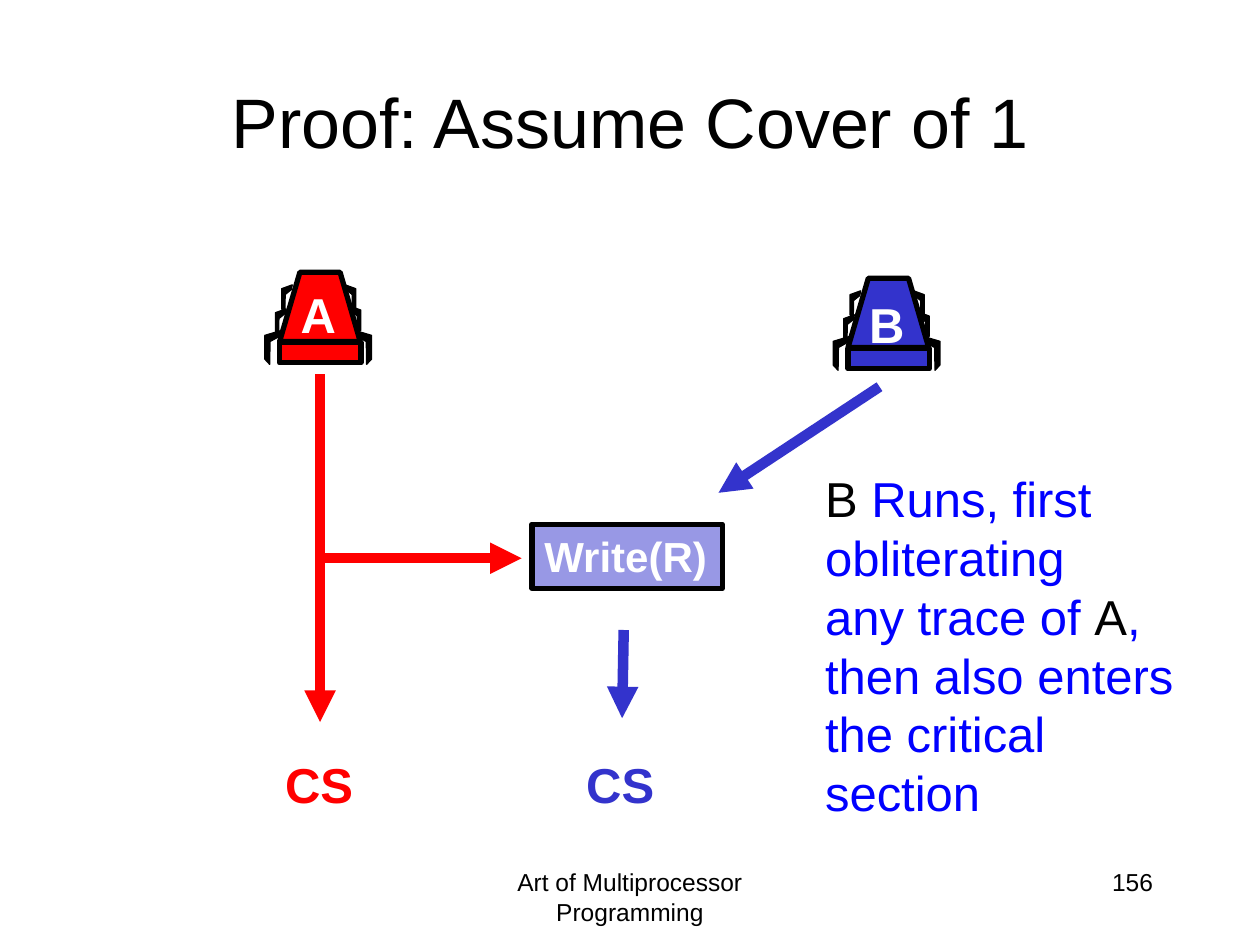
from lxml import etree
from pptx import Presentation
from pptx.dml.color import RGBColor
from pptx.enum.shapes import MSO_CONNECTOR, MSO_SHAPE
from pptx.enum.text import MSO_ANCHOR, PP_ALIGN
from pptx.oxml.ns import qn
from pptx.util import Pt

LEFT, CENTER, RIGHT = PP_ALIGN.LEFT, PP_ALIGN.CENTER, PP_ALIGN.RIGHT
TOP, MIDDLE = MSO_ANCHOR.TOP, MSO_ANCHOR.MIDDLE
STRAIGHT = MSO_CONNECTOR.STRAIGHT
RECTANGLE = MSO_SHAPE.RECTANGLE

FONT = "Arial"
COLORS = {
    "black": "000000",
    "white": "FFFFFF",
    "red": "FF0000",
    "indigo": "3333CC",
    "blue": "0000FF",
}

# Outlines of the right-hand limbs, measured from the point where they attach
FOOT = [(0, 0), (10, 3), (10, 16.5), (7.2, 19.5), (7, 6.5), (0.7, 3)]
ARM = [(0, 0), (6, 2.2), (6, 13.7), (4.2, 15.5), (4, 5.5), (0.5, 2.7)]
# Outline, attachment on the right and on the left
BACK_LIMBS = [
    (FOOT, (51.1, 33.1), (10.1, 33.1)),
    (ARM, (49, 19.4), (12.2, 20.9)),
]
FRONT_LIMBS = [(ARM, (46.1, 7.2), (15.8, 7.2))]
HOOD = [(8.6, 39.6), (20.2, 0), (43.2, 0), (54.7, 39.6)]

EXPLANATION = [
    [("B", "black"), (" Runs, first obliterating", "blue")],
    [("any trace of ", "blue"), ("A", "black"), (",", "blue")],
    [("then also enters", "blue")],
    [("the critical", "blue")],
    [("section", "blue")],
]


def rgb(name):
    return RGBColor.from_string(COLORS[name])


def style_shape(shape, fill, line_width):
    shape.shadow.inherit = False
    shape.fill.solid()
    shape.fill.fore_color.rgb = rgb(fill)
    shape.line.color.rgb = rgb("black")
    shape.line.width = Pt(line_width)


def write(shape, paragraphs, size, bold=False, align=LEFT, anchor=TOP, wrap=True):
    """Fill a shape with paragraphs, each a list of (text, colour) spans."""
    frame = shape.text_frame
    frame.word_wrap = wrap
    frame.vertical_anchor = anchor
    for index, spans in enumerate(paragraphs):
        para = frame.add_paragraph() if index else frame.paragraphs[0]
        para.alignment = align
        for text, color in spans:
            span = para.add_run()
            span.text = text
            span.font.name = FONT
            span.font.size = Pt(size)
            span.font.bold = bold
            span.font.color.rgb = rgb(color)


def add_text(page, area, paragraphs, size, **options):
    box = page.shapes.add_textbox(*map(Pt, area))
    write(box, paragraphs, size, **options)


def add_arrow(page, start, end, color):
    arrow = page.shapes.add_connector(STRAIGHT, *map(Pt, start + end))
    arrow.line.color.rgb = rgb(color)
    arrow.line.width = Pt(6)
    etree.SubElement(arrow.line._get_or_add_ln(), qn("a:tailEnd"), type="triangle")
    etree.SubElement(arrow._element.spPr, qn("a:effectLst"))


def add_outline(group, points, fill, line_width):
    corners = [(Pt(x), Pt(y)) for x, y in points]
    builder = group.shapes.build_freeform(*corners[0])
    builder.add_line_segments(corners[1:], close=True)
    style_shape(builder.convert_to_shape(), fill, line_width)


def add_limbs(group, left, top, limbs):
    """Draw each limb on the right and mirrored on the left."""
    for outline, *attachments in limbs:
        for side, (x, y) in zip((1, -1), attachments):
            points = [(left + x + side * dx, top + y + dy) for dx, dy in outline]
            add_outline(group, points, "black", 0.75)


def add_thread(page, left, top, color, name, name_top):
    """Draw a many-legged thread figure with its name."""
    group = page.shapes.add_group_shape()
    add_limbs(group, left, top, BACK_LIMBS)
    add_outline(group, [(left + x, top + y) for x, y in HOOD], color, 3)
    base = group.shapes.add_shape(
        RECTANGLE, Pt(left + 8.6), Pt(top + 40.3), Pt(46.5), Pt(11.5))
    style_shape(base, color, 3)
    add_limbs(group, left, top, FRONT_LIMBS)
    add_text(page, (left + 13.2, name_top, 35, 41), [[(name, "white")]], 28,
             bold=True, align=CENTER, wrap=False)


def add_register(page):
    register = page.shapes.add_shape(RECTANGLE, Pt(304), Pt(299.5), Pt(108.7), Pt(36.7))
    style_shape(register, "indigo", 3)
    fill_color = register.fill._xPr.find(qn("a:solidFill"))[0]
    etree.SubElement(fill_color, qn("a:alpha"), val="50000")
    write(register, [[("Write(R)", "white")]], 24, bold=True, wrap=False)


def main():
    deck = Presentation()
    deck.slide_width, deck.slide_height = Pt(720), Pt(540)
    page = deck.slides.add_slide(deck.slide_layouts[6])

    add_text(page, (54, 24, 612, 90), [[("Proof: Assume Cover of 1", "black")]], 40,
             align=CENTER, anchor=MIDDLE)
    add_text(page, (246, 492, 228, 36),
             [[("Art of Multiprocessor Programming", "black")]], 14, align=CENTER)
    add_text(page, (516, 492, 150, 36), [[("156", "black")]], 14, align=RIGHT)

    add_thread(page, 151.2, 155.6, "red", "A", 159.2)
    add_thread(page, 476, 159, "indigo", "B", 164.8)

    add_arrow(page, (182.9, 213.8), (182.9, 412.6), "red")
    add_arrow(page, (182.9, 319), (298.1, 319), "red")
    add_register(page)
    add_arrow(page, (502.6, 221), (410.6, 281.6), "indigo")
    add_arrow(page, (356.4, 360), (355.5, 410.4), "indigo")
    for left, color in ((154.8, "red"), (326.9, "indigo")):
        add_text(page, (left, 427.7, 54, 41), [[("CS", color)]], 28,
                 bold=True, align=RIGHT, wrap=False)

    add_text(page, (464.4, 264.2, 303, 209), EXPLANATION, 28)
    deck.save("out.pptx")


if __name__ == "__main__":
    main()
